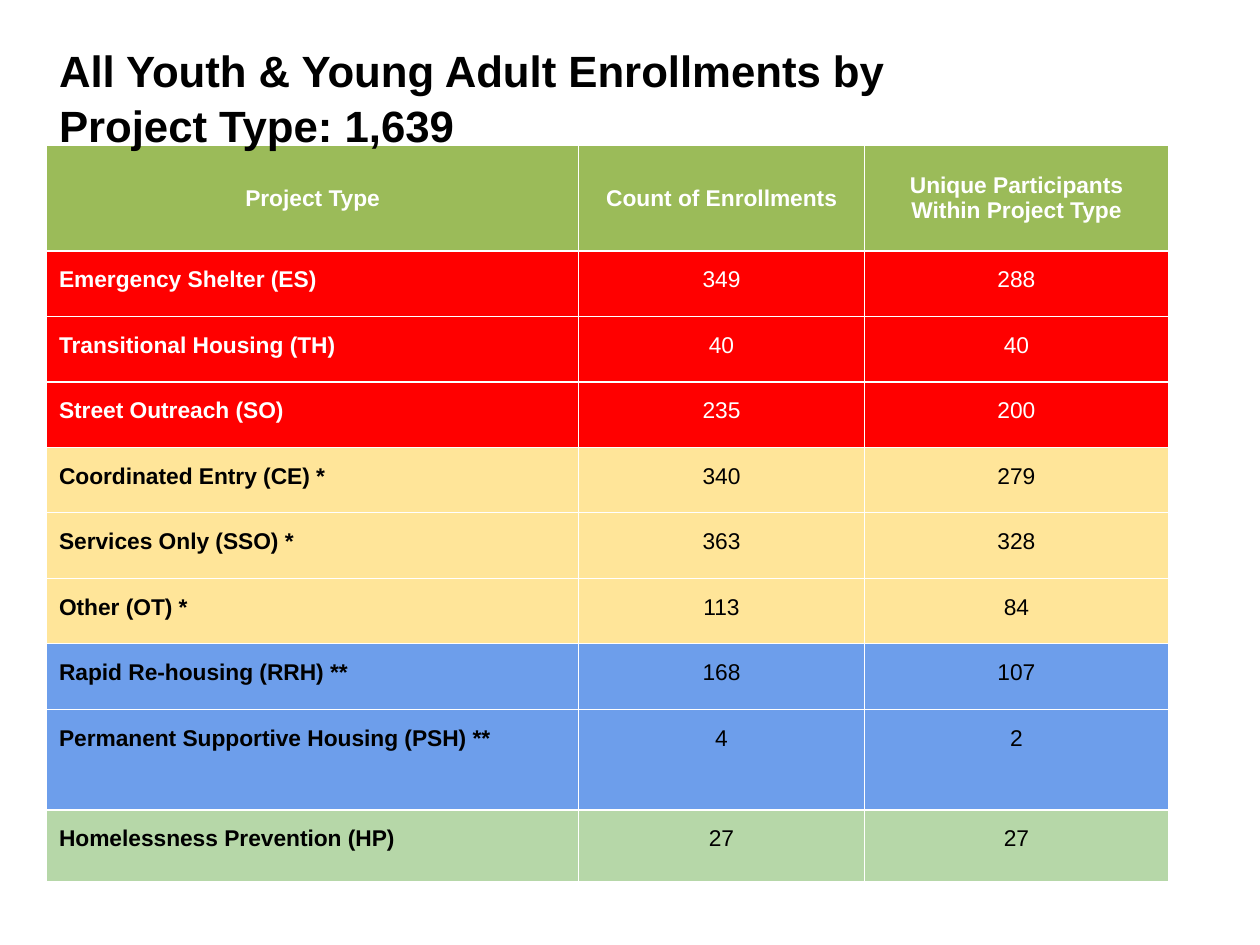
import pptx
import pptx.dml.color
import pptx.enum.text
import pptx.oxml
import pptx.oxml.ns
import pptx.util

Cm = pptx.util.Cm
RGBColor = pptx.dml.color.RGBColor
PP_ALIGN = pptx.enum.text.PP_ALIGN
MSO_ANCHOR = pptx.enum.text.MSO_ANCHOR

WHITE = RGBColor(0xFF, 0xFF, 0xFF)
BLACK = RGBColor(0x00, 0x00, 0x00)
OLIVE = RGBColor(0x9B, 0xBB, 0x59)
RED = RGBColor(0xFF, 0x00, 0x00)
YELLOW = RGBColor(0xFF, 0xE5, 0x99)
BLUE = RGBColor(0x6D, 0x9E, 0xEB)
GREEN = RGBColor(0xB6, 0xD7, 0xA8)

HEADER = ("Project Type", "Count of Enrollments", "Unique Participants Within Project Type")
GROUPS = (
    (RED, WHITE, (("Emergency Shelter (ES)", 349, 288),
                  ("Transitional Housing (TH)", 40, 40),
                  ("Street Outreach (SO)", 235, 200))),
    (YELLOW, BLACK, (("Coordinated Entry (CE) *", 340, 279),
                     ("Services Only (SSO) *", 363, 328),
                     ("Other (OT) *", 113, 84))),
    (BLUE, BLACK, (("Rapid Re-housing (RRH) **", 168, 107),
                   ("Permanent Supportive Housing (PSH) **", 4, 2))),
    (GREEN, BLACK, (("Homelessness Prevention (HP)", 27, 27),)),
)
COL_WIDTHS = (10.72, 5.77, 6.12)
ROW_HEIGHTS = (2.13,) + (1.32,) * 7 + (2.03, 1.45)
LEFT = Cm(0.94)


def set_attrs(obj, values):
    """Set each named attribute of an object."""
    for name, value in values.items():
        setattr(obj, name, value)


def write_text(tf, text, size, color, bold, align):
    """Write one formatted run into a text frame and return its paragraph."""
    p = tf.paragraphs[0]
    p.alignment = align
    r = p.add_run()
    r.text = text
    set_attrs(r.font, {"name": "Arial", "size": pptx.util.Pt(size), "bold": bold})
    r.font.color.rgb = color
    return p


def add_borders(cell):
    """Draw thin white lines on all four sides of a cell."""
    tc_pr = cell._tc.get_or_add_tcPr()
    ns = pptx.oxml.ns.nsdecls("a")
    for i, side in enumerate(("lnL", "lnR", "lnT", "lnB")):
        tc_pr.insert(i, pptx.oxml.parse_xml(
            f'<a:{side} {ns} w="9525"><a:solidFill><a:srgbClr val="{WHITE}"/>'
            f'</a:solidFill></a:{side}>'))


def fill_cell(cell, text, fill, color, bold, align, anchor):
    """Fill, border and write one table cell."""
    set_attrs(cell, {
        "margin_left": Cm(0.25), "margin_right": Cm(0.25),
        "margin_top": Cm(0.33), "margin_bottom": Cm(0.33),
        "vertical_anchor": anchor,
    })
    cell.fill.solid()
    cell.fill.fore_color.rgb = fill
    add_borders(cell)
    write_text(cell.text_frame, text, 13, color, bold, align)


def add_enrollment_table(s):
    """Add the table of enrollments by project type."""
    rows = [(OLIVE, WHITE, HEADER)]
    rows += [(fill, color, row) for fill, color, group in GROUPS for row in group]
    frame = s.shapes.add_table(len(rows), len(HEADER), LEFT, Cm(2.93),
                               Cm(sum(COL_WIDTHS)), Cm(sum(ROW_HEIGHTS)))
    table = frame.table
    for col, width in zip(table.columns, COL_WIDTHS):
        col.width = Cm(width)
    for i, (fill, color, row) in enumerate(rows):
        table.rows[i].height = Cm(ROW_HEIGHTS[i])
        header = i == 0
        anchor = MSO_ANCHOR.MIDDLE if header else MSO_ANCHOR.TOP
        for j, value in enumerate(row):
            align = PP_ALIGN.CENTER if header or j else PP_ALIGN.LEFT
            fill_cell(table.cell(i, j), str(value), fill, color,
                      header or j == 0, align, anchor)


def format_title(s, text):
    """Place and format the title in front of the table."""
    sp = s.shapes.title
    set_attrs(sp, {"left": LEFT, "top": Cm(0.58), "width": Cm(18.85), "height": Cm(2.64)})
    tf = sp.text_frame
    set_attrs(tf, {
        "margin_left": Cm(0.25), "margin_right": Cm(0.25),
        "margin_top": Cm(0.25), "margin_bottom": Cm(0.25),
        "word_wrap": True, "vertical_anchor": MSO_ANCHOR.TOP,
        "auto_size": pptx.enum.text.MSO_AUTO_SIZE.SHAPE_TO_FIT_TEXT,
    })
    p = write_text(tf, text, 25, BLACK, True, PP_ALIGN.LEFT)
    set_attrs(p, {"line_spacing": 1.05, "space_before": pptx.util.Pt(0)})
    sp.element.getparent().append(sp.element)


def main():
    """Build the enrollment slide."""
    prs = pptx.Presentation()
    set_attrs(prs, {"slide_width": Cm(25.4), "slide_height": Cm(19.05)})
    s = prs.slides.add_slide(prs.slide_layouts[5])
    add_enrollment_table(s)
    format_title(s, "All Youth & Young Adult Enrollments by Project Type: 1,639")
    prs.save("out.pptx")


if __name__ == "__main__":
    main()
